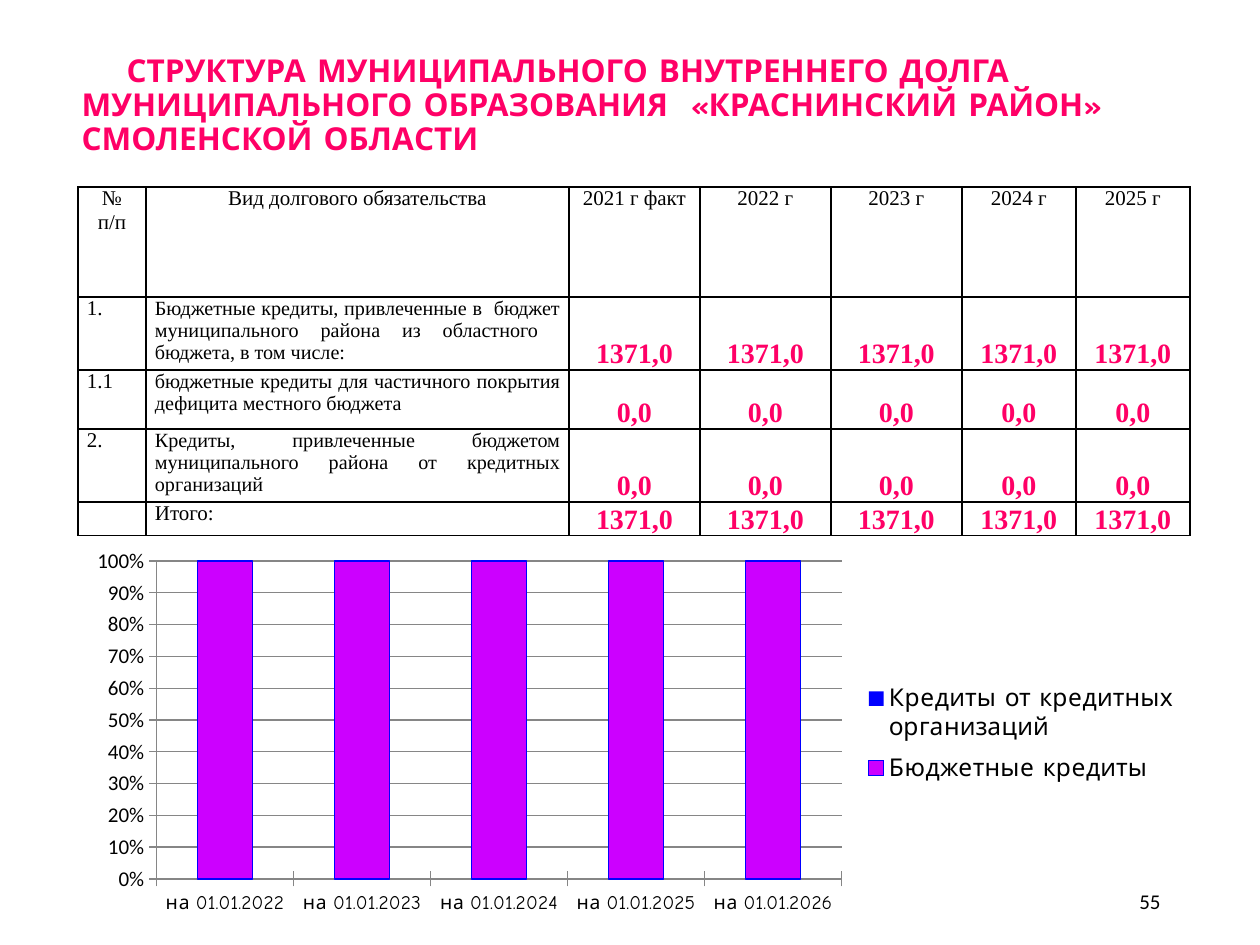
from dataclasses import dataclass

from lxml.etree import SubElement
from pptx import Presentation
from pptx.chart.data import CategoryChartData
from pptx.dml.color import RGBColor
from pptx.enum.chart import XL_CHART_TYPE, XL_LEGEND_POSITION, XL_TICK_MARK
from pptx.enum.text import MSO_ANCHOR, PP_ALIGN
from pptx.oxml import parse_xml
from pptx.oxml.ns import nsdecls, qn
from pptx.util import Emu, Pt


@dataclass(frozen=True)
class Theme:
    accent: str = "FF0066"
    ink: str = "000000"
    grid: str = "868686"
    budget: str = "CC00FF"
    bank: str = "0000FF"
    display: str = "Comic Neue"
    serif: str = "Times New Roman"
    sans: str = "Calibri"
    title: float = 18
    figure: float = 16
    legend: float = 14
    label: float = 12
    debt: float = 11.5
    category: float = 11


THEME = Theme()
TITLE = ("СТРУКТУРА МУНИЦИПАЛЬНОГО ВНУТРЕННЕГО ДОЛГА МУНИЦИПАЛЬНОГО "
         "ОБРАЗОВАНИЯ  «КРАСНИНСКИЙ РАЙОН» СМОЛЕНСКОЙ ОБЛАСТИ")
PAGE_NUMBER = "55"
HEADER = ["№ п/п", "Вид долгового обязательства",
          "2021 г факт", "2022 г", "2023 г", "2024 г", "2025 г"]
DEBTS = [
    ("1.", "Бюджетные кредиты, привлеченные в  бюджет муниципального района "
           "из областного  бюджета, в том числе:", ["1371,0"] * 5),
    ("1.1", "бюджетные кредиты для частичного покрытия дефицита местного бюджета",
     ["0,0"] * 5),
    ("2.", "Кредиты, привлеченные бюджетом муниципального района от кредитных "
           "организаций", ["0,0"] * 5),
    ("", "Итого:", ["1371,0"] * 5),
]
COLUMNS = [68, 423, 131, 131, 131, 114, 114]
ROWS = [110, 73, 59, 73, 31]
YEARS = range(2022, 2027)
SERIES = [("Бюджетные кредиты", 100, THEME.budget),
          ("Кредиты от кредитных организаций", 0, THEME.bank)]


def px(count):
    return Emu(round(count * 914400 / 126))


def style(font, name, size, color=THEME.ink, bold=False):
    font.name, font.size, font.bold = name, Pt(size), bold
    font.color.rgb = RGBColor.from_string(color)


def place(shape, left, top, width, height):
    shape.left, shape.top = px(left), px(top)
    shape.width, shape.height = px(width), px(height)


def add_title(page):
    box = page.shapes.title
    place(box, 69, 29, 1142, 186)
    frame = box.text_frame
    frame.word_wrap = True
    frame.vertical_anchor = MSO_ANCHOR.TOP
    frame.margin_top = px(26)
    para = frame.paragraphs[0]
    para.text = TITLE
    para.alignment = PP_ALIGN.LEFT
    para.line_spacing = 0.9
    para._p.get_or_add_pPr().set("indent", str(px(45)))
    style(para.font, THEME.display, THEME.title, THEME.accent, True)


def add_page_number(page):
    box = page.shapes.add_textbox(px(890), px(876), px(283), px(50))
    frame = box.text_frame
    frame.word_wrap = True
    frame.vertical_anchor = MSO_ANCHOR.MIDDLE
    para = frame.paragraphs[0]
    para.text = PAGE_NUMBER
    para.alignment = PP_ALIGN.RIGHT
    style(para.font, THEME.sans, THEME.label)


def add_borders(cell):
    properties = cell._tc.get_or_add_tcPr()
    for index, side in enumerate(("lnL", "lnR", "lnT", "lnB")):
        properties.insert(index, parse_xml(
            f'<a:{side} {nsdecls("a")} w="12700"><a:solidFill>'
            f'<a:srgbClr val="{THEME.ink}"/></a:solidFill></a:{side}>'))


def fill_cell(cell, text, alignment, size, figure=False):
    cell.fill.background()
    cell.margin_left = cell.margin_right = px(9)
    cell.margin_top = cell.margin_bottom = 0
    cell.vertical_anchor = MSO_ANCHOR.BOTTOM if figure else MSO_ANCHOR.TOP
    para = cell.text_frame.paragraphs[0]
    para.text = text
    para.alignment = alignment
    style(para.font, THEME.serif, size, THEME.accent if figure else THEME.ink, figure)
    if not text:
        SubElement(para._p, qn("a:endParaRPr")).set("sz", str(size * 100))
    add_borders(cell)


def add_debt_table(page):
    frame = page.shapes.add_table(len(ROWS), len(COLUMNS), px(78), px(187),
                                  px(sum(COLUMNS)), px(sum(ROWS)))
    table = frame.table
    table.horz_banding = table.first_row = False
    for column, width in zip(table.columns, COLUMNS):
        column.width = px(width)
    for row, height in zip(table.rows, ROWS):
        row.height = px(height)
    for column, text in enumerate(HEADER):
        fill_cell(table.cell(0, column), text, PP_ALIGN.CENTER, THEME.label)
    for row, (number, debt, amounts) in enumerate(DEBTS, 1):
        is_total = not number
        fill_cell(table.cell(row, 0), number, PP_ALIGN.LEFT, THEME.label)
        fill_cell(table.cell(row, 1), debt,
                  PP_ALIGN.LEFT if is_total else PP_ALIGN.JUSTIFY,
                  THEME.label if is_total else THEME.debt)
        for column, amount in enumerate(amounts, 2):
            fill_cell(table.cell(row, column), amount, PP_ALIGN.CENTER,
                      THEME.figure, figure=True)


def set_layout(element, index, target, **fractions):
    """Fix a chart part at fractions of the chart's size."""
    for old in element.findall(qn("c:layout")):
        element.remove(old)
    inner = f'<c:layoutTarget val="{target}"/>' if target else ""
    modes = "".join(f'<c:{side}Mode val="edge"/>' for side in "xy")
    sizes = "".join(f'<c:{side} val="{value}"/>' for side, value in fractions.items())
    element.insert(index, parse_xml(
        f'<c:layout {nsdecls("c")}><c:manualLayout>{inner}{modes}{sizes}'
        "</c:manualLayout></c:layout>"))


def add_debt_chart(page):
    data = CategoryChartData()
    data.categories = [f"на 01.01.{year}" for year in YEARS]
    for name, share, _ in SERIES:
        data.add_series(name, [share] * len(YEARS))
    chart = page.shapes.add_chart(XL_CHART_TYPE.COLUMN_STACKED_100, px(78), px(542),
                                  px(1123), px(383), data).chart
    style(chart.font, THEME.sans, THEME.title)
    chart.has_title = False

    plot = chart.plots[0]
    plot.gap_width, plot.overlap, plot.vary_by_categories = 150, 100, False
    for series, (_, _, color) in zip(plot.series, SERIES):
        series.format.fill.solid()
        series.format.fill.fore_color.rgb = RGBColor.from_string(color)
    outline = plot.series[0].format.line
    outline.color.rgb = RGBColor.from_string(THEME.bank)
    outline.width = Pt(0.75)

    categories, values = chart.category_axis, chart.value_axis
    style(categories.tick_labels.font, THEME.display, THEME.category)
    style(values.tick_labels.font, THEME.sans, THEME.label)
    values.tick_labels.number_format = "0%"
    values.tick_labels.number_format_is_linked = False
    values.has_major_gridlines = True
    for axis in (categories, values):
        axis.major_tick_mark = XL_TICK_MARK.CROSS
    for part in (categories, values, values.major_gridlines):
        part.format.line.color.rgb = RGBColor.from_string(THEME.grid)
        part.format.line.width = Pt(0.75)

    chart.has_legend = True
    legend = chart.legend
    legend.position = XL_LEGEND_POSITION.RIGHT
    legend.include_in_layout = False
    style(legend.font, THEME.display, THEME.legend)
    plot_area = chart._chartSpace.find(".//" + qn("c:plotArea"))
    set_layout(plot_area, 0, "inner", x=0.07, y=0.05, w=0.61, h=0.83)
    set_layout(legend._element, 1, None, x=0.69, y=0.34, w=0.3, h=0.32)


def main():
    deck = Presentation()
    deck.slide_width, deck.slide_height = px(1260), px(945)
    page = deck.slides.add_slide(deck.slide_layouts[5])
    add_title(page)
    add_page_number(page)
    add_debt_table(page)
    add_debt_chart(page)
    deck.save("out.pptx")


if __name__ == "__main__":
    main()
